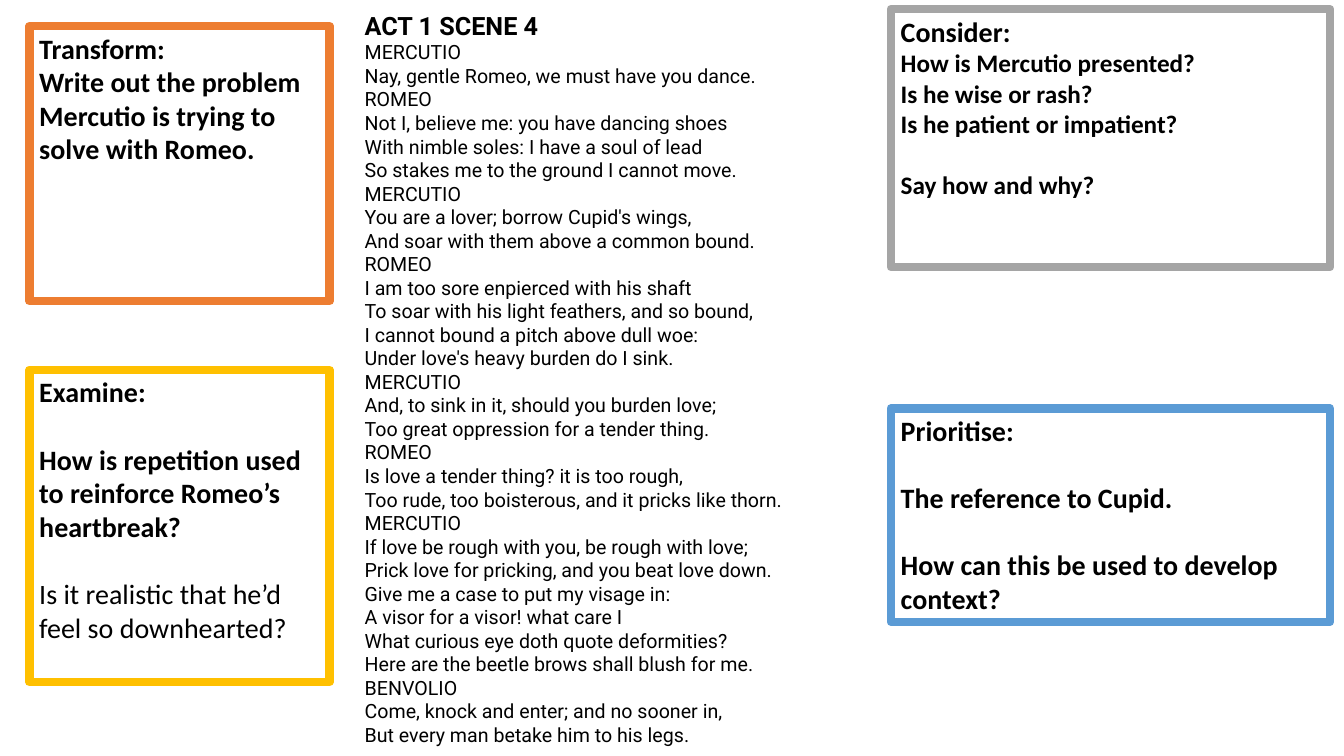
from pptx import Presentation
from pptx.dml.color import RGBColor
from pptx.enum.shapes import MSO_SHAPE
from pptx.enum.text import MSO_ANCHOR, PP_ALIGN
from pptx.util import Cm, Pt

RECTANGLE = MSO_SHAPE.RECTANGLE
TOP = MSO_ANCHOR.TOP
LEFT = PP_ALIGN.LEFT

BLACK = RGBColor(0x00, 0x00, 0x00)
WHITE = RGBColor(0xFF, 0xFF, 0xFF)
ORANGE = RGBColor(0xED, 0x7D, 0x31)
GREY = RGBColor(0xA5, 0xA5, 0xA5)
YELLOW = RGBColor(0xFF, 0xC0, 0x00)
BLUE = RGBColor(0x5B, 0x9B, 0xD5)

LEFT_COLUMN = (0.74, 7.57)
RIGHT_COLUMN = (22.45, 11.07)
BLANK_LAYOUT = 6

TASKS = [
    (LEFT_COLUMN, 0.66, 6.93, ORANGE, [
        ("Transform:", 20, True, 0),
        ("Write out the problem Mercutio is trying to solve with Romeo.", 20, True, 0),
    ]),
    (RIGHT_COLUMN, 0.23, 6.5, GREY, [
        ("Consider:", 20, True, 0),
        ("How is Mercutio presented?", 18, True, 0),
        ("Is he wise or rash?", 18, True, 0),
        ("Is he patient or impatient?", 18, True, 0),
        ("Say how and why?", 18, True, 22),
    ]),
    (LEFT_COLUMN, 9.32, 7.87, YELLOW, [
        ("Examine:", 20, True, 0),
        ("How is repetition used to reinforce Romeo’s heartbreak?", 20, True, 24),
        ("Is it realistic that he’d feel so downhearted?", 20, False, 24),
    ]),
    (RIGHT_COLUMN, 10.29, 5.38, BLUE, [
        ("Prioritise:", 20, True, 0),
        ("The reference to Cupid.", 20, True, 24),
        ("How can this be used to develop context?", 20, True, 24),
    ]),
]

SPEECHES = [
    ("MERCUTIO", "Nay, gentle Romeo, we must have you dance."),
    ("ROMEO",
     "Not I, believe me: you have dancing shoes",
     "With nimble soles: I have a soul of lead",
     "So stakes me to the ground I cannot move."),
    ("MERCUTIO",
     "You are a lover; borrow Cupid's wings,",
     "And soar with them above a common bound."),
    ("ROMEO",
     "I am too sore enpierced with his shaft",
     "To soar with his light feathers, and so bound,",
     "I cannot bound a pitch above dull woe:",
     "Under love's heavy burden do I sink."),
    ("MERCUTIO",
     "And, to sink in it, should you burden love;",
     "Too great oppression for a tender thing."),
    ("ROMEO",
     "Is love a tender thing? it is too rough,",
     "Too rude, too boisterous, and it pricks like thorn."),
    ("MERCUTIO",
     "If love be rough with you, be rough with love;",
     "Prick love for pricking, and you beat love down.",
     "Give me a case to put my visage in:",
     "A visor for a visor! what care I",
     "What curious eye doth quote deformities?",
     "Here are the beetle brows shall blush for me."),
    ("BENVOLIO",
     "Come, knock and enter; and no sooner in,",
     "But every man betake him to his legs."),
]


class SlideBuilder:
    task_font = "Calibri"
    script_font = "Roboto"
    border = Pt(6)

    def __init__(self, slide):
        self.slide = slide

    def fill_text(self, shape, paragraphs, font_name):
        frame = shape.text_frame
        frame.word_wrap = True
        frame.vertical_anchor = TOP
        for index, (text, size, bold, space_before) in enumerate(paragraphs):
            paragraph = frame.add_paragraph() if index else frame.paragraphs[0]
            paragraph.text = text
            paragraph.alignment = LEFT
            paragraph.space_before = Pt(space_before)
            paragraph.font.name = font_name
            paragraph.font.size = Pt(size)
            paragraph.font.bold = bold
            paragraph.font.color.rgb = BLACK

    def task_box(self, column, top, height, color, paragraphs):
        left, width = column
        shape = self.slide.shapes.add_shape(
            RECTANGLE, Cm(left), Cm(top), Cm(width), Cm(height))
        shape.shadow.inherit = False
        shape.fill.solid()
        shape.fill.fore_color.rgb = WHITE
        shape.line.color.rgb = color
        shape.line.width = self.border
        self.fill_text(shape, paragraphs, self.task_font)

    def scene(self, left, top, width, height, heading, speeches):
        shape = self.slide.shapes.add_textbox(
            Cm(left), Cm(top), Cm(width), Cm(height))
        paragraphs = [(heading, 18, True, 0)]
        paragraphs += [("\n".join(lines), 14, False, 0) for lines in speeches]
        self.fill_text(shape, paragraphs, self.script_font)


def main():
    presentation = Presentation()
    presentation.slide_width = Cm(33.87)
    presentation.slide_height = Cm(19.05)
    layout = presentation.slide_layouts[BLANK_LAYOUT]
    builder = SlideBuilder(presentation.slides.add_slide(layout))
    for task in TASKS:
        builder.task_box(*task)
    builder.scene(8.94, 0.13, 12.22, 18.8, "ACT 1 SCENE 4", SPEECHES)
    presentation.save("out.pptx")


if __name__ == "__main__":
    main()
